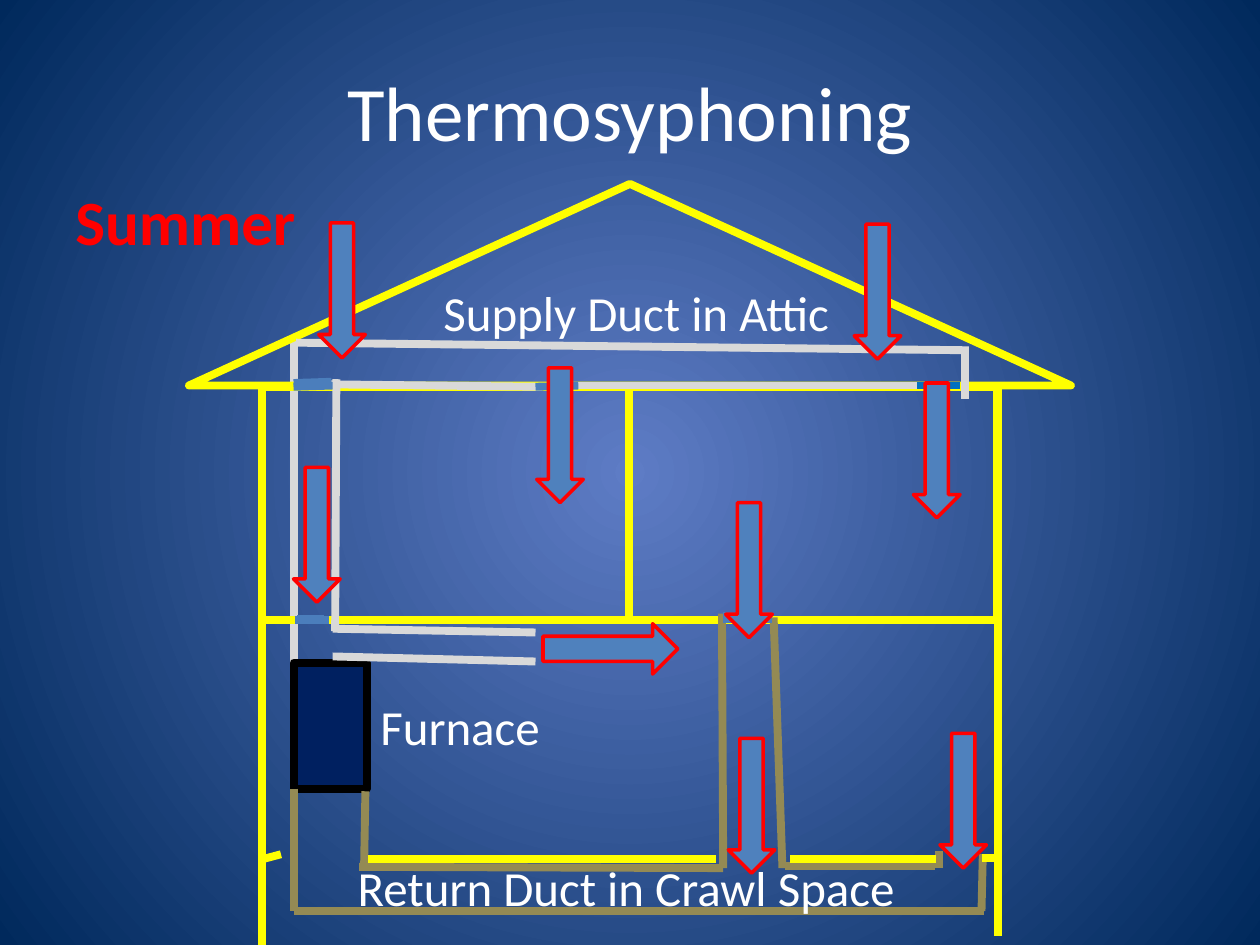
from dataclasses import dataclass

from pptx import Presentation
from pptx.dml.color import RGBColor
from pptx.enum.shapes import MSO_CONNECTOR, MSO_SHAPE
from pptx.enum.text import MSO_ANCHOR, MSO_AUTO_SIZE, PP_ALIGN
from pptx.oxml.ns import qn
from pptx.oxml.xmlchemy import OxmlElement
from pptx.shapes.autoshape import Shape
from pptx.shapes.connector import Connector
from pptx.slide import Slide
from pptx.util import Inches, Pt

STRAIGHT = MSO_CONNECTOR.STRAIGHT
TRIANGLE = MSO_SHAPE.ISOSCELES_TRIANGLE
RECTANGLE = MSO_SHAPE.RECTANGLE
DOWN_ARROW = MSO_SHAPE.DOWN_ARROW
RIGHT_ARROW = MSO_SHAPE.RIGHT_ARROW
MIDDLE = MSO_ANCHOR.MIDDLE
TOP_ANCHOR = MSO_ANCHOR.TOP
FIT_SHAPE = MSO_AUTO_SIZE.SHAPE_TO_FIT_TEXT
NO_FIT = MSO_AUTO_SIZE.NONE
CENTER = PP_ALIGN.CENTER
LEFT = PP_ALIGN.LEFT

WHITE = RGBColor(0xFF, 0xFF, 0xFF)
BLACK = RGBColor(0, 0, 0)
RED = RGBColor(0xFF, 0, 0)
YELLOW = RGBColor(0xFF, 0xFF, 0)
LIGHT_GRAY = RGBColor(0xD9, 0xD9, 0xD9)
TAN = RGBColor(0x94, 0x8A, 0x54)
VENT_BLUE = RGBColor(0x4B, 0x7E, 0xBC)
BRIGHT_BLUE = RGBColor(0, 0x70, 0xC0)
ARROW_BLUE = RGBColor(0x4F, 0x81, 0xBD)
NAVY = RGBColor(0, 0x20, 0x60)
GLOW = RGBColor(0x5E, 0x7C, 0xC5)
DEEP_BLUE = RGBColor(0, 0x29, 0x5C)

FONT = "Calibri"
WALL_WIDTH = 4.5
ARROW_LENGTH = 1.07


@dataclass
class Label:
    text: str
    box: tuple[float, float, float, float]
    size: int = 28
    color: RGBColor = WHITE
    bold: bool = False
    title: bool = False


@dataclass
class Run:
    color: RGBColor
    segments: list[tuple[float, float, float, float]]
    width: float = WALL_WIDTH


LEFT_DUCT = Run(LIGHT_GRAY, [(2.33, 2.71, 2.33, 5.3)])

RUNS = [
    Run(LIGHT_GRAY, [
        (2.67, 3.01, 2.66, 5.01),
        (4.25, 5.25, 2.64, 5.21),
        (4.3, 3.07, 2.59, 3.05),
        (7.69, 2.78, 2.35, 2.72),
        (7.28, 3.06, 4.59, 3.06),
        (7.66, 2.79, 7.66, 3.17),
        (4.25, 5.02, 2.64, 4.99),
    ]),
    Run(TAN, [
        (5.74, 6.89, 2.85, 6.88),
        (7.81, 7.23, 2.33, 7.23),
        (6.14, 4.9, 6.21, 6.89),
        (5.73, 4.87, 5.74, 6.89),
        (7.42, 6.87, 6.23, 6.87),
        (7.45, 6.75, 7.45, 6.89),
        (2.33, 6.26, 2.33, 7.23),
    ]),
    Run(VENT_BLUE, [(4.25, 3.07, 4.59, 3.06)]),
    Run(BRIGHT_BLUE, [(7.28, 3.06, 7.62, 3.06)]),
    Run(VENT_BLUE, [(5.74, 4.9, 6.13, 4.9)], 6),
    Run(VENT_BLUE, [
        (2.33, 3.07, 2.64, 3.06),
        (2.36, 4.91, 2.57, 4.91),
        (2.33, 3.04, 2.63, 3.03),
        (2.34, 4.92, 2.61, 4.92),
    ]),
    Run(YELLOW, [(7.92, 3.07, 7.92, 7.43), (2.08, 5.48, 2.08, 7.31)]),
    Run(TAN, [(2.9, 6.28, 2.89, 6.87), (7.8, 6.78, 7.79, 7.23)]),
    Run(YELLOW, [
        (2.08, 3.14, 2.08, 7.5),
        (6.27, 6.82, 7.43, 6.82),
        (2.92, 6.82, 5.68, 6.82),
        (7.79, 6.81, 7.93, 6.81),
        (2.08, 6.82, 2.23, 6.78),
    ]),
]

LABELS = [
    Label("Thermosyphoning", (0.5, 0.25, 9, 1.25), 44, title=True),
    Label("Furnace", (2.92, 5.48, 1.48, 0.57)),
    Label("Supply Duct in Attic", (3.42, 2.19, 3.31, 0.57)),
    Label("Return Duct in Crawl Space", (2.74, 6.76, 4.51, 0.57)),
    Label("Summer", (0.5, 1.4, 1.97, 0.71), 36, RED, True),
]

DOWNDRAFTS = [
    (2.33, 3.71), (2.53, 1.77), (6.78, 1.78), (7.25, 3.04),
    (4.26, 2.92), (5.76, 3.99), (7.46, 5.82), (5.78, 5.86),
]


def apply_format(target: object, values: dict[str, object]) -> None:
    for name, value in values.items():
        setattr(target, name, value)


def paint_background(page: Slide) -> None:
    fill = page.background.fill
    fill.gradient()
    for stop, color in zip(fill.gradient_stops, (GLOW, DEEP_BLUE)):
        stop.color.rgb = color
    linear = next(page.element.iter(qn("a:lin")))
    radial = OxmlElement("a:path")
    radial.set("path", "circle")
    center = OxmlElement("a:fillToRect")
    for side in "ltrb":
        center.set(side, "50000")
    radial.append(center)
    linear.getparent().replace(linear, radial)


def draw_line(page: Slide, segment: tuple[float, float, float, float],
              color: RGBColor, width: float = WALL_WIDTH) -> Connector:
    line = page.shapes.add_connector(STRAIGHT, *map(Inches, segment))
    line.line.color.rgb = color
    line.line.width = Pt(width)
    line.element.spPr.append(OxmlElement("a:effectLst"))
    return line


def draw_run(page: Slide, run: Run) -> None:
    for segment in run.segments:
        draw_line(page, segment, run.color, run.width)


def draw_shape(page: Slide, kind: MSO_SHAPE, box: tuple[float, float, float, float],
               outline: RGBColor, width: float = WALL_WIDTH,
               fill: RGBColor | None = None) -> Shape:
    shape = page.shapes.add_shape(kind, *map(Inches, box))
    shape.shadow.inherit = False
    if fill is None:
        shape.fill.background()
    else:
        shape.fill.solid()
        shape.fill.fore_color.rgb = fill
    shape.line.color.rgb = outline
    shape.line.width = Pt(width)
    return shape


def draw_label(page: Slide, label: Label) -> None:
    frame = page.shapes.add_textbox(*map(Inches, label.box)).text_frame
    apply_format(frame, {
        "word_wrap": label.title,
        "auto_size": NO_FIT if label.title else FIT_SHAPE,
        "vertical_anchor": MIDDLE if label.title else TOP_ANCHOR,
    })
    para = frame.paragraphs[0]
    para.alignment = CENTER if label.title else LEFT
    span = para.add_run()
    span.text = label.text
    apply_format(span.font, {"name": FONT, "size": Pt(label.size), "bold": label.bold})
    span.font.color.rgb = label.color


def main() -> None:
    deck = Presentation()
    apply_format(deck, {"slide_width": Inches(10), "slide_height": Inches(7.5)})
    page = deck.slides.add_slide(deck.slide_layouts[6])
    paint_background(page)

    draw_run(page, LEFT_DUCT)
    draw_shape(page, TRIANGLE, (1.5, 1.46, 7, 1.6), YELLOW)
    upper_floor = draw_shape(page, RECTANGLE, (2.08, 3.07, 5.83, 1.85), YELLOW)
    draw_shape(page, RECTANGLE, (2.33, 5.26, 0.58, 1), BLACK, fill=NAVY)
    partition = draw_line(page, (5, 3.07, 5, 4.92), YELLOW)
    partition.begin_connect(upper_floor, 0)
    partition.end_connect(upper_floor, 2)

    for run in RUNS:
        draw_run(page, run)
    for label in LABELS:
        draw_label(page, label)

    draw_shape(page, RIGHT_ARROW, (4.31, 4.95, ARROW_LENGTH, 0.4), RED, 2, ARROW_BLUE)
    for left, top in DOWNDRAFTS:
        draw_shape(page, DOWN_ARROW, (left, top, 0.37, ARROW_LENGTH), RED, 2, ARROW_BLUE)

    deck.save("out.pptx")


if __name__ == "__main__":
    main()
